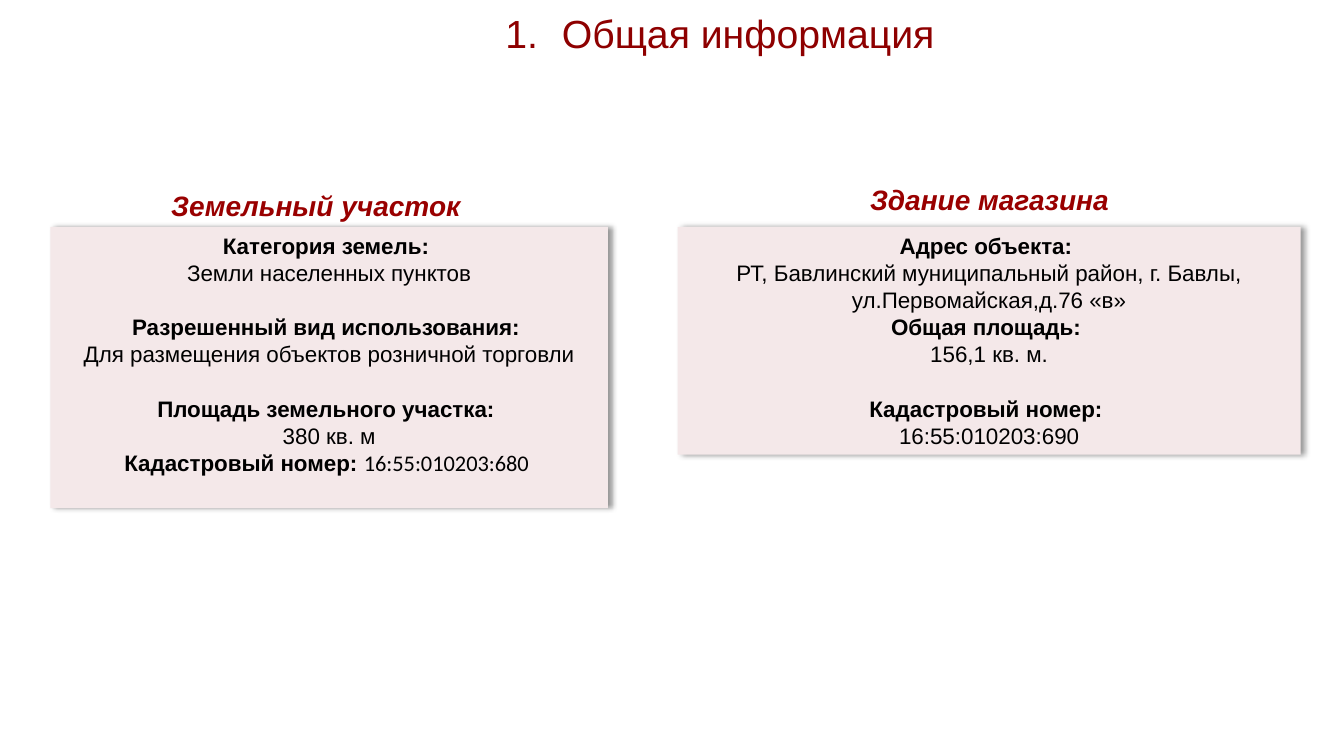
from lxml.etree import SubElement
from pptx import Presentation
from pptx.dml.color import RGBColor
from pptx.enum.shapes import MSO_SHAPE as SHAPE
from pptx.enum.text import MSO_ANCHOR as ANCHOR, PP_ALIGN as ALIGN
from pptx.oxml import parse_xml
from pptx.oxml.ns import nsdecls, qn
from pptx.util import Inches, Pt

DARK = RGBColor(0x8E, 0x00, 0x00)
RED = RGBColor(0x99, 0x00, 0x00)
PINK = RGBColor(0xF4, 0xE8, 0xE9)
BLACK = RGBColor(0x00, 0x00, 0x00)

SHADOW = f"""<a:effectLst {nsdecls("a")}>
  <a:outerShdw blurRad="50800" dist="38100" dir="0" algn="l" rotWithShape="0">
    <a:srgbClr val="000000"><a:alpha val="40000"/></a:srgbClr>
  </a:outerShdw>
</a:effectLst>"""


def write(para, text, size=16, color=BLACK, bold=False, italic=False,
          face="Arial", align=ALIGN.CENTER):
    """Add one formatted run to a paragraph."""
    para.alignment = align
    run = para.add_run()
    run.text = text
    font = run.font
    font.name, font.size, font.bold, font.italic = face, Pt(size), bold, italic
    font.color.rgb = color


def add_box(left, top, width, height):
    """Add a wrapping text box and return its text frame."""
    box = slide.shapes.add_textbox(
        Inches(left), Inches(top), Inches(width), Inches(height))
    box.text_frame.word_wrap = True
    return box.text_frame


deck = Presentation()
deck.slide_width, deck.slide_height = Inches(13.33), Inches(7.5)
slide = deck.slides.add_slide(deck.slide_layouts[6])

# Numbered title
frame = add_box(2.14, 0.1, 10, 0.51)
frame.vertical_anchor = ANCHOR.MIDDLE
title = frame.paragraphs[0]
props = title._p.get_or_add_pPr()
props.set("marL", str(Inches(0.56)))
props.set("indent", str(-Inches(0.56)))
SubElement(props, qn("a:buAutoNum"), type="arabicPeriod")
title.line_spacing = 0.9
write(title, "Общая информация", size=28, color=DARK)

# Cards: left, width, height, then rows of label, value, gap above
LINE = 19.4
CARDS = [
    (0.5, 5.53, 2.79, [
        ("Категория земель: ", "Земли населенных пунктов", False),
        ("Разрешенный вид использования: ",
         "Для размещения объектов розничной торговли", True),
        ("Площадь земельного участка: ", "380 кв. м", True),
    ]),
    (6.72, 6.18, 2.26, [
        ("Адрес объекта: ",
         "РТ, Бавлинский муниципальный район, г. Бавлы, "
         "ул.Первомайская,д.76 «в»", False),
        ("Общая площадь: ", "156,1 кв. м.", False),
        ("Кадастровый номер: ", "16:55:010203:690", True),
    ]),
]
frames = []
for left, width, height, rows in CARDS:
    card = slide.shapes.add_shape(
        SHAPE.RECTANGLE, Inches(left), Inches(2.25),
        Inches(width), Inches(height))
    card.fill.solid()
    card.fill.fore_color.rgb = PINK
    card.line.fill.background()
    card._element.spPr.append(parse_xml(SHADOW))
    frame = card.text_frame
    frame.word_wrap = True
    frame.vertical_anchor = ANCHOR.TOP
    frames.append(frame)
    for label, value, gap in rows:
        first = label == rows[0][0]
        head = frame.paragraphs[0] if first else frame.add_paragraph()
        if gap:
            head.space_before = Pt(LINE)
        write(head, label, bold=True)
        body = frame.add_paragraph()
        write(body, value)
        head.line_spacing = body.line_spacing = Pt(LINE)

# The land card ends with label and number on one line
last = frames[0].add_paragraph()
last.line_spacing = Pt(LINE)
write(last, "Кадастровый номер: ", bold=True)
write(last, "16:55:010203:680 ", face="Calibri")

# Card headings
HEADS = [
    ("Земельный участок", 1.6, 1.82, 3.44, ALIGN.LEFT),
    ("Здание магазина", 6.65, 1.76, 6.33, ALIGN.CENTER),
]
for text, left, top, width, align in HEADS:
    frame = add_box(left, top, width, 0.44)
    write(frame.paragraphs[0], text, size=20, color=RED, bold=True,
          italic=True, align=align)

deck.save("out.pptx")
